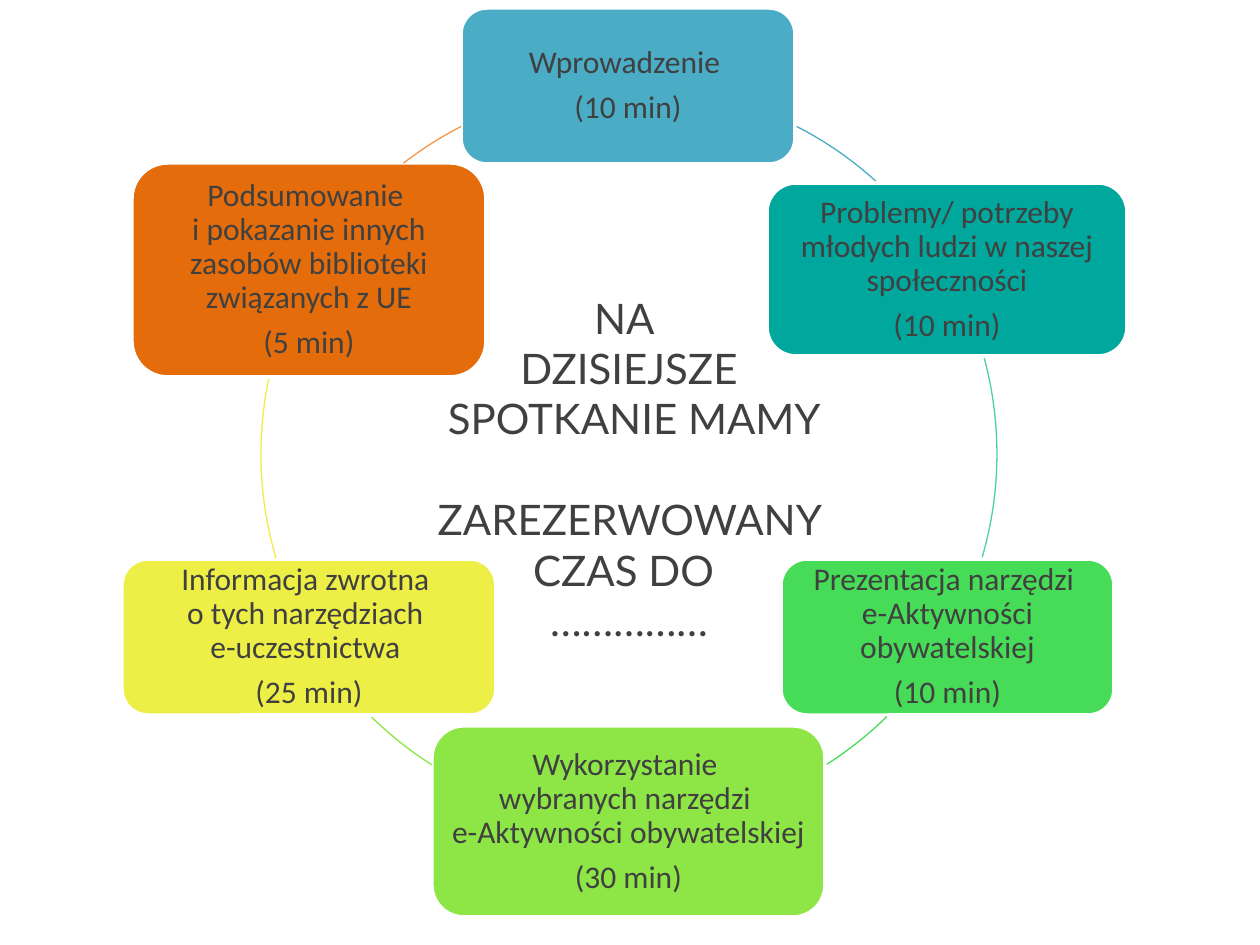
import pptx
import pptx.util
import pptx.dml.color
import pptx.enum.shapes
import pptx.enum.text

RGB = pptx.dml.color.RGBColor
Pt = pptx.util.Pt
SHAPE = pptx.enum.shapes.MSO_SHAPE
CENTER = pptx.enum.text.PP_ALIGN.CENTER

WHITE = RGB(0xFF, 0xFF, 0xFF)
TEXT = RGB(0x40, 0x40, 0x40)
BLUE = RGB(0x4B, 0xAC, 0xC6)
TEAL = RGB(0x00, 0xA7, 0x9D)
MINT = RGB(0x49, 0xD1, 0xA3)
GREEN = RGB(0x47, 0xDC, 0x57)
LIME = RGB(0x8D, 0xE6, 0x46)
YELLOW = RGB(0xEE, 0xEF, 0x46)
ORANGE = RGB(0xE4, 0x6C, 0x0A)
PEACH = RGB(0xF7, 0x96, 0x46)

SCALE = 914400 / 126  # EMU per px


def px(*lengths):
    return [pptx.util.Emu(round(n * SCALE)) for n in lengths]


def write(tf, lines, font, size):
    tf.text = "\n".join(lines[:1])
    tf.word_wrap = True
    for i, line in enumerate(lines):
        p = tf.paragraphs[0] if i == 0 else tf.add_paragraph()
        p.text = line
        p.alignment = CENTER
        for r in p.runs:
            r.font.name = font
            r.font.size = Pt(size)
            r.font.color.rgb = TEXT


prs = pptx.Presentation()
prs.slide_width, prs.slide_height = px(1260, 945)
s = prs.slides.add_slide(prs.slide_layouts[6])

# Agenda steps clockwise: box, fill, topic, duration,
# then the arc to the next step: colour, start and end in degrees
steps = [
    ((461, 8, 334, 156), BLUE, "Wprowadzenie ", "(10 min)",
     BLUE, 297.1, 312.5),
    ((767, 183, 360, 173), TEAL,
     "Problemy/ potrzeby młodych ludzi w naszej społeczności", "(10 min)",
     MINT, 344.9, 16.5),
    ((781, 559, 333, 156), GREEN,
     "Prezentacja narzędzi \ve-Aktywności obywatelskiej", "(10 min)",
     GREEN, 45.5, 57.7),
    ((432, 726, 393, 191), LIME,
     "Wykorzystanie \vwybranych narzędzi \ve-Aktywności obywatelskiej",
     "(30 min)", LIME, 122.4, 134.5),
    ((122, 559, 374, 156), YELLOW,
     "Informacja zwrotna \vo tych narzędziach \ve-uczestnictwa ", "(25 min)",
     YELLOW, 163.5, 191.8),
    ((132, 163, 354, 214), ORANGE,
     "Podsumowanie \vi pokazanie innych zasobów biblioteki związanych z UE",
     "(5 min)", PEACH, 232.2, 242.9),
]

for box, fill, topic, duration, arc_color, start, end in steps:
    # Step box
    sp = s.shapes.add_shape(SHAPE.ROUNDED_RECTANGLE, *px(*box))
    sp.shadow.inherit = False
    sp.fill.solid()
    sp.fill.fore_color.rgb = fill
    sp.line.color.rgb = WHITE
    sp.line.width = Pt(2)
    tf = sp.text_frame
    tf.margin_left = tf.margin_right = tf.margin_top = tf.margin_bottom = px(9)[0]
    tf.vertical_anchor = pptx.enum.text.MSO_ANCHOR.MIDDLE
    write(tf, [topic, duration], "Calibri", 18)
    for p in tf.paragraphs:
        p.line_spacing = 0.9
        p.space_after = Pt(6.3)

    # Arc on the common circle
    arc = s.shapes.add_shape(SHAPE.ARC, *px(261, 86, 736, 736))
    arc.shadow.inherit = False
    arc.fill.background()
    arc.line.color.rgb = arc_color
    arc.line.width = Pt(0.75)
    # Angles are stored in 1/60000 degree, adjustments in 1/100000
    arc.adjustments[0] = start * 0.6
    arc.adjustments[1] = end * 0.6

# Central message
tb = s.shapes.add_textbox(*px(420, 286, 418, 318))
write(tb.text_frame,
      ["NA ", "DZISIEJSZE", " SPOTKANIE MAMY", " ZAREZERWOWANY ",
       "CZAS DO ", "……………"], "Lato", 24)
tb.text_frame.auto_size = pptx.enum.text.MSO_AUTO_SIZE.SHAPE_TO_FIT_TEXT

prs.save("out.pptx")
